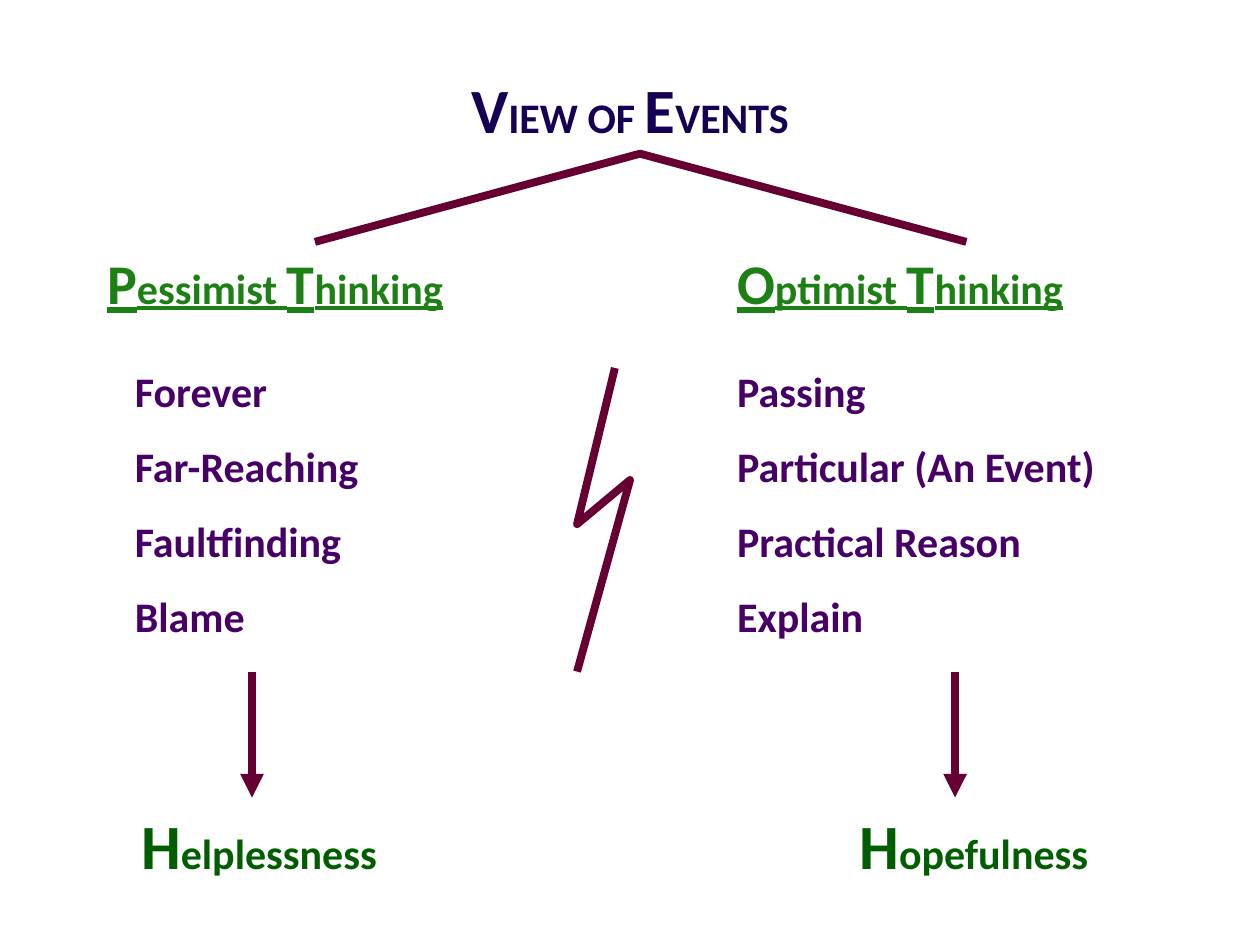
from lxml.etree import SubElement
from pptx import Presentation
from pptx.dml.color import RGBColor
from pptx.enum.shapes import MSO_CONNECTOR
from pptx.enum.text import MSO_ANCHOR, MSO_AUTO_SIZE, PP_ALIGN
from pptx.oxml.ns import qn
from pptx.util import Inches, Pt

COLORS = {
    "title": "160054",
    "head": "1C8014",
    "list": "470066",
    "result": "005E00",
    "line": "660033",
}
FONT = "Calibri"
SMALL = 24


def place(shape, left, top, width, height):
    shape.left, shape.top = Inches(left), Inches(top)
    shape.width, shape.height = Inches(width), Inches(height)


def write(shape, text, color, cap=SMALL, align=PP_ALIGN.LEFT, under=False, after=0):
    """Write one paragraph a line; a "|" switches between cap and small size."""
    frame = shape.text_frame
    frame.word_wrap = True
    frame.auto_size = MSO_AUTO_SIZE.NONE
    frame.vertical_anchor = MSO_ANCHOR.TOP
    frame.margin_left = frame.margin_right = 0
    frame.margin_top = frame.margin_bottom = 0
    for i, line in enumerate(text.split("\n")):
        para = frame.paragraphs[0] if i == 0 else frame.add_paragraph()
        para.alignment = align
        para.space_before, para.space_after = Pt(0), Pt(after)
        props = para._p.get_or_add_pPr()
        props.set("marL", "0")
        props.set("indent", "0")
        SubElement(props, qn("a:buNone"))
        for j, part in enumerate(line.split("|")):
            run = para.add_run()
            run.text = part
            font = run.font
            font.name, font.bold, font.underline = FONT, True, under
            font.size = Pt(SMALL if j % 2 else cap)
            font.color.rgb = RGBColor.from_string(COLORS[color])


def stroke(shape):
    shape.line.color.rgb = RGBColor.from_string(COLORS["line"])
    shape.line.width = Pt(4.5)


def add_path(slide, points):
    start, *rest = [(Inches(x), Inches(y)) for x, y in points]
    pen = slide.shapes.build_freeform(*start)
    pen.add_line_segments(rest, close=False)
    shape = pen.convert_to_shape()
    shape.shadow.inherit = False
    shape.fill.background()
    stroke(shape)
    SubElement(shape.line._get_or_add_ln(), qn("a:round"))


def add_arrow(slide, x, top, end):
    arrow = slide.shapes.add_connector(
        MSO_CONNECTOR.STRAIGHT, Inches(x), Inches(top), Inches(x), Inches(end))
    stroke(arrow)
    SubElement(arrow.line._get_or_add_ln(), qn("a:tailEnd"), type="triangle")
    SubElement(arrow._element.spPr, qn("a:effectLst"))


def add_side(slide, head, items, result, ids, lefts, arrow):
    """Fill one column: heading, list, arrow and the result below it."""
    head_box, list_box = (slide.placeholders[i] for i in ids)
    place(head_box, lefts[0], 1.97, 3.4, 0.6)
    write(head_box, head, "head", cap=32, under=True)
    place(list_box, lefts[1], 2.9, 3.3, 2.4)
    write(list_box, "\n".join(items), "list", after=14)
    add_arrow(slide, arrow, 5.33, 6.33)
    box = slide.shapes.add_textbox(0, 0, 0, 0)
    place(box, lefts[2], 6.4, 2.4, 0.65)
    write(box, result, "result", cap=36)


def main():
    deck = Presentation()
    deck.slide_width, deck.slide_height = Inches(10), Inches(7.5)
    slide = deck.slides.add_slide(deck.slide_layouts.get_by_name("Comparison"))

    title = slide.shapes.title
    place(title, 0.75, 0.56, 8.5, 0.62)
    write(title, "V|IEW OF |E|VENTS", "title", cap=36, align=PP_ALIGN.CENTER)
    add_path(slide, [(2.5, 1.92), (5.08, 1.22), (7.67, 1.92)])
    add_path(slide, [(4.88, 2.92), (4.58, 4.16), (5, 3.81), (4.58, 5.33)])

    add_side(slide, "P|essimist |T|hinking",
             ["Forever", "Far-Reaching", "Faultfinding", "Blame"],
             "H|elplessness", (1, 2), (0.85, 1.07, 1.12), 2)
    add_side(slide, "O|ptimist |T|hinking",
             ["Passing", "Particular (An Event)", "Practical Reason", "Explain"],
             "H|opefulness", (3, 4), (5.85, 5.85, 6.82), 7.58)
    deck.save("out.pptx")


if __name__ == "__main__":
    main()
